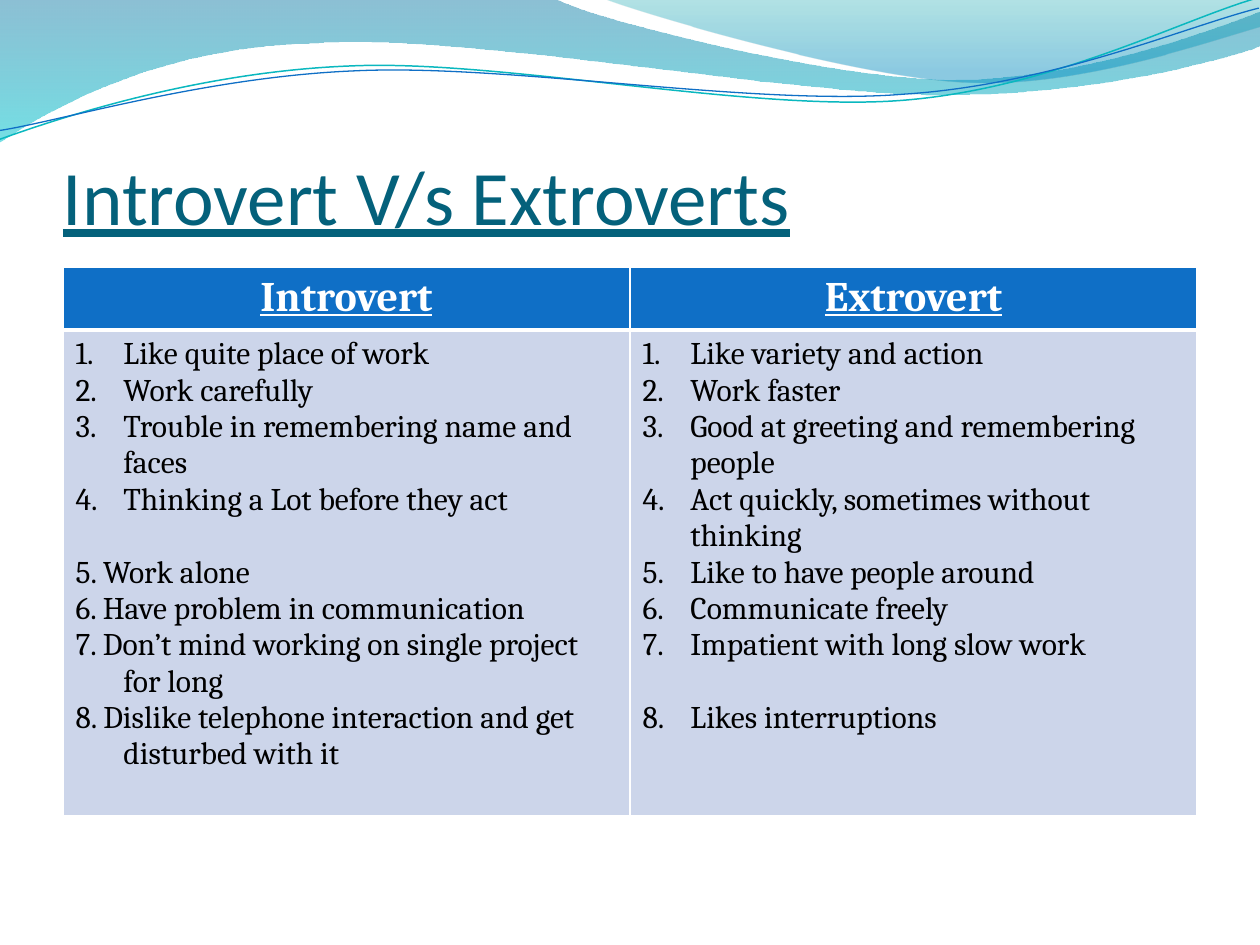
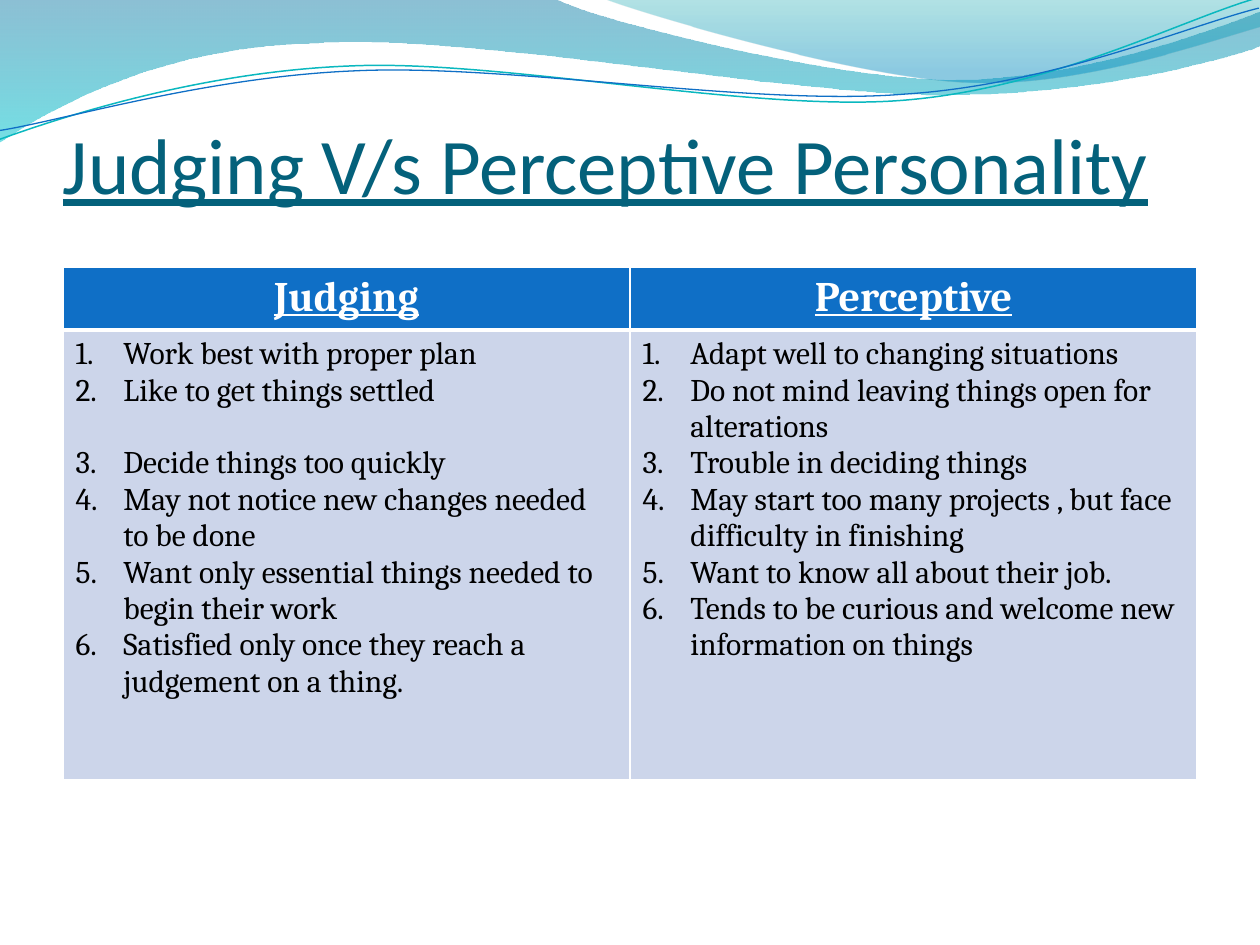
from lxml import etree
from pptx import Presentation
from pptx.dml.color import RGBColor
from pptx.enum.text import MSO_ANCHOR, PP_ALIGN
from pptx.oxml.ns import qn
from pptx.util import Inches, Pt

BOTTOM, CENTER = MSO_ANCHOR.BOTTOM, PP_ALIGN.CENTER
TITLE_FONT, BODY_FONT = "Calibri", "Cambria"
TEAL, BLUE, PALE, WHITE, BLACK = "04617B", "0F6FC6", "CCD5EA", "FFFFFF", "000000"
LEFT, WIDTH = 0.5, 9
TABLE_TOP, HEADER_HEIGHT = 2.12, 0.45
HANG = Inches(0.38)
LINE_GAP = Pt(20.8)
LINE_TILT = 357.3

# Header waves: a start point, then lines (2 numbers) and cubic curves (6 numbers)
WIDE_WAVE = [(0, 0), (4.4, -0.01), (4.76, 0.17, 6.64, 0.63, 7.58, 0.63),
             (8.53, 0.63, 9.58, 0.26, 10, 0.09), (10.01, 0.36),
             (9.83, 0.44, 8.7, 0.76, 7.46, 0.75), (6.22, 0.75, 3.82, 0.28, 2.57, 0.34),
             (1.29, 0.36, 0.46, 0.83, -0.01, 1.13)]
RIGHT_WAVE = [(4.79, -0.01), (5.09, 0.11, 6.82, 0.62, 7.69, 0.65),
              (8.56, 0.69, 9.61, 0.32, 10, 0.21), (10, 0)]
# The two lines are level here and tilted when drawn
TEAL_LINE = [(-0.02, 0.87), (0.47, 0.72, 1.58, 0.41, 2.78, 0.42),
             (3.96, 0.42, 5.91, 0.93, 7.12, 0.9), (8.32, 0.87, 9.4, 0.36, 10, 0.22)]
BLUE_LINE = [(-0.02, 0.8), (0.46, 0.75, 1.64, 0.45, 2.83, 0.46),
             (4.04, 0.46, 5.96, 0.89, 7.16, 0.85), (8.35, 0.83, 9.42, 0.42, 10.01, 0.3)]

# Each column is a heading and its points; "" leaves one line free
INTROVERT = ("Introvert", [
    "Like quite place of work", "Work carefully",
    "Trouble in remembering name and faces", "Thinking a Lot before they act",
    "", "5. Work alone", "6. Have problem in communication",
    "7. Don’t mind working on single project for long",
    "8. Dislike telephone interaction and get disturbed with it"])
EXTROVERT = ("Extrovert", [
    "Like variety and action", "Work faster", "Good at greeting and remembering people",
    "Act quickly, sometimes without thinking", "Like to have people around",
    "Communicate freely", "Impatient with long slow work", "", "Likes interruptions"])
JUDGING = ("Judging", [
    "Work best with proper plan", "Like to get things settled", "",
    "Decide things too quickly", "May not notice new changes needed to be done",
    "Want only essential things needed to begin their work",
    "Satisfied only once they reach a judgement on a thing."])
PERCEPTIVE = ("Perceptive", [
    "Adapt well to changing situations", "Do not mind leaving things open for alterations",
    "Trouble in deciding things",
    "May start too many projects , but face difficulty in finishing",
    "Want to know all about their job.",
    "Tends to be curious and welcome new information on things"])


def rgb(value):
    return RGBColor.from_string(value)


class Deck:
    def __init__(self):
        self.prs = Presentation()
        self.prs.slide_width, self.prs.slide_height = Inches(10), Inches(7.5)
        self.slide = None

    def new_slide(self):
        self.slide = self.prs.slides.add_slide(self.prs.slide_layouts[6])
        self.wave(WIDE_WAVE, [(0, "0074A1", 45), (1, "00C6CF", 55)])
        self.wave(RIGHT_WAVE, [(0, "00A1A9", 30), (0.8, "008BBF", 45)])
        self.wave_line(TEAL_LINE, "0AB8BF", 0.85)
        self.wave_line(BLUE_LINE, BLUE, 0.75)

    def outline(self, segments, close):
        points = [(Inches(x), Inches(y)) for segment in segments
                  for x, y in zip(segment[::2], segment[1::2])]
        builder = self.slide.shapes.build_freeform(*points[0])
        builder.add_line_segments(points[1:], close=close)
        shape = builder.convert_to_shape()
        shape.shadow.inherit = False
        # Join the three points of each curve into one cubic segment
        steps = iter(list(shape.element.iter(qn("a:lnTo"))))
        for segment in segments[1:]:
            first = next(steps)
            if len(segment) == 6:
                curve = etree.Element(qn("a:cubicBezTo"))
                first.addprevious(curve)
                for step in (first, next(steps), next(steps)):
                    curve.append(step[0])
                    step.getparent().remove(step)
        return shape

    def wave(self, segments, stops):
        shape = self.outline(segments, True)
        shape.line.fill.background()
        shape.fill.gradient()
        shape.fill.gradient_angle = 270
        for stop, (position, color, _) in zip(shape.fill.gradient_stops, stops):
            stop.position = position
            stop.color.rgb = rgb(color)
        for color_node, (_, _, opacity) in zip(shape.element.iter(qn("a:srgbClr")), stops):
            etree.SubElement(color_node, qn("a:alpha"), val=str(opacity * 1000))

    def wave_line(self, segments, color, width):
        shape = self.outline(segments, False)
        shape.rotation = LINE_TILT
        shape.fill.background()
        shape.line.color.rgb = rgb(color)
        shape.line.width = Pt(width)

    def style(self, paragraph, font_name, size, color, bold=False, underline=False):
        font = paragraph.font
        font.name, font.size, font.bold, font.underline = font_name, Pt(size), bold, underline
        font.color.rgb = rgb(color)

    def title(self, text, top, height, size):
        box = self.slide.shapes.add_textbox(Inches(LEFT), Inches(top),
                                            Inches(WIDTH), Inches(height))
        frame = box.text_frame
        frame.word_wrap = True
        frame.vertical_anchor = BOTTOM
        frame.margin_left = frame.margin_right = frame.margin_bottom = 0
        frame.margin_top = Inches(0.05)
        frame.text = text
        self.style(frame.paragraphs[0], TITLE_FONT, size, TEAL, underline=True)

    def paint_cell(self, cell, color, top, bottom):
        properties = cell._tc.get_or_add_tcPr()
        for side, width in (("L", 1), ("R", 1), ("T", top), ("B", bottom)):
            border = etree.SubElement(properties, qn(f"a:ln{side}"), w=str(Pt(width)))
            fill = etree.SubElement(border, qn("a:solidFill"))
            etree.SubElement(fill, qn("a:srgbClr"), val=WHITE)
        cell.fill.solid()
        cell.fill.fore_color.rgb = rgb(color)

    def points(self, frame, points):
        frame.text = "\n".join(point for point in points if point)
        paragraphs = iter(frame.paragraphs)
        for previous, point in zip([None, *points], points):
            if not point:
                continue
            paragraph = next(paragraphs)
            if previous == "":
                paragraph.space_before = LINE_GAP
            properties = paragraph._p.get_or_add_pPr()
            properties.set("marL", str(HANG))
            properties.set("indent", str(-HANG))
            if point[0].isdigit():
                etree.SubElement(properties, qn("a:buNone"))
            else:
                etree.SubElement(properties, qn("a:buFont"), typeface=TITLE_FONT)
                etree.SubElement(properties, qn("a:buAutoNum"), type="arabicPeriod")
            self.style(paragraph, BODY_FONT, 18, BLACK)

    def comparison(self, columns, body_height):
        heights = (HEADER_HEIGHT, body_height)
        table = self.slide.shapes.add_table(
            2, len(columns), Inches(LEFT), Inches(TABLE_TOP),
            Inches(WIDTH), Inches(sum(heights))).table
        for row, height in zip(table.rows, heights):
            row.height = Inches(height)
        for index, (heading, points) in enumerate(columns):
            header, body = table.cell(0, index), table.cell(1, index)
            self.paint_cell(header, BLUE, 1, 3)
            self.paint_cell(body, PALE, 3, 1)
            header.text = heading
            paragraph = header.text_frame.paragraphs[0]
            paragraph.alignment = CENTER
            self.style(paragraph, BODY_FONT, 24, WHITE, bold=True, underline=True)
            self.points(body.text_frame, points)


def main():
    deck = Deck()

    # Introverts and extroverts
    deck.new_slide()
    deck.title("Introvert V/s Extroverts", 0.83, 1.08, 44)
    deck.comparison([INTROVERT, EXTROVERT], 3.85)

    # Judging and perceptive
    deck.new_slide()
    deck.title("Judging V/s Perceptive Personality", 0.77, 0.9, 45)
    deck.comparison([JUDGING, PERCEPTIVE], 3.57)

    deck.prs.save("out.pptx")


if __name__ == "__main__":
    main()
